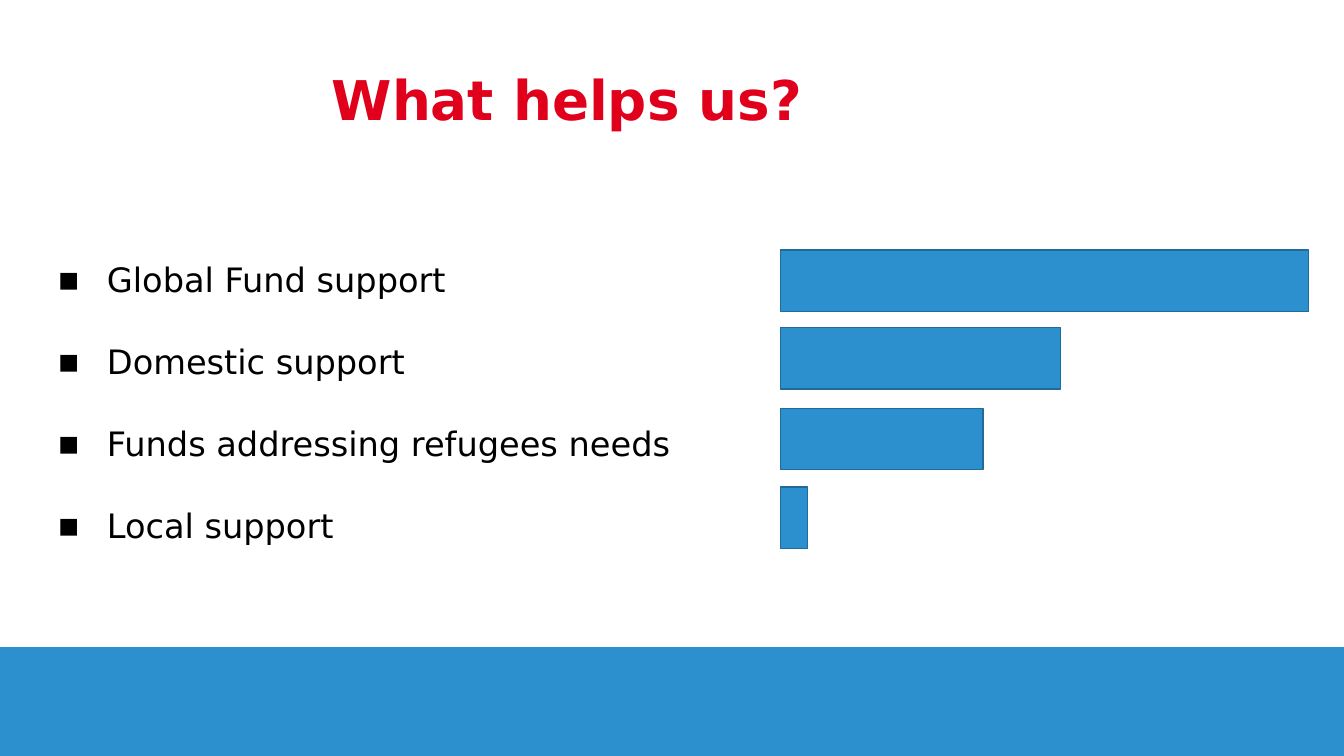
from lxml.etree import SubElement
from pptx import Presentation
from pptx.dml.color import RGBColor
from pptx.enum.shapes import MSO_SHAPE
from pptx.enum.text import MSO_ANCHOR, MSO_AUTO_SIZE, PP_ALIGN
from pptx.oxml.ns import qn
from pptx.util import Inches, Pt

BLUE = RGBColor(0x2C, 0x90, 0xCF)
DARK_BLUE = RGBColor(0x21, 0x6B, 0x99)
RED = RGBColor(0xE0, 0x00, 0x1B)
BLACK = RGBColor(0x00, 0x00, 0x00)
FONT = "DejaVu Sans"

SUPPORT_BARS = [
    ("Global Fund support", 2.48, 5.24),
    ("Domestic support", 3.25, 2.78),
    ("Funds addressing refugees needs", 4.05, 2.01),
    ("Local support", 4.83, 0.27),
]


def add_rectangle(left, top, width, height, line_color):
    shape = page.shapes.add_shape(
        MSO_SHAPE.RECTANGLE, Inches(left), Inches(top), Inches(width), Inches(height)
    )
    shape.shadow.inherit = False
    shape.fill.solid()
    shape.fill.fore_color.rgb = BLUE
    shape.line.color.rgb = line_color
    shape.line.width = Pt(1)


def format_text(para, size, color, bold):
    for span in para.runs:
        span.font.name = FONT
        span.font.size = Pt(size)
        span.font.bold = bold
        span.font.color.rgb = color


deck = Presentation()
deck.slide_width = Inches(13.33)
deck.slide_height = Inches(7.5)
page = deck.slides.add_slide(deck.slide_layouts[1])

add_rectangle(0, 6.43, 13.33, 1.07, BLUE)

title = page.shapes.title
title.left, title.top = Inches(2.88), Inches(0.63)
title.width, title.height = Inches(5.13), Inches(0.71)
frame = title.text_frame
frame.text = "What helps us?"
frame.auto_size = MSO_AUTO_SIZE.NONE
frame.vertical_anchor = MSO_ANCHOR.TOP
frame.margin_left = frame.margin_right = Inches(0.05)
frame.margin_top = frame.margin_bottom = Inches(0.02)
frame.paragraphs[0].alignment = PP_ALIGN.RIGHT
format_text(frame.paragraphs[0], 39.1, RED, True)

body = page.placeholders[1]
body.left, body.top = Inches(0.47), Inches(2.52)
body.width, body.height = Inches(7.27), Inches(3.3)
frame = body.text_frame
frame.text = "\n".join(label for label, top, width in SUPPORT_BARS)
frame.auto_size = MSO_AUTO_SIZE.NONE
frame.vertical_anchor = MSO_ANCHOR.TOP
for index, para in enumerate(frame.paragraphs):
    properties = para._p.get_or_add_pPr()
    properties.set("marL", str(Inches(0.49)))
    properties.set("indent", str(-Inches(0.49)))
    SubElement(properties, qn("a:buFont"), typeface=FONT)
    SubElement(properties, qn("a:buChar"), char="▪")
    para.space_before = Pt(29.7 if index else 0)
    format_text(para, 24, BLACK, False)

for label, top, width in SUPPORT_BARS:
    add_rectangle(7.74, top, width, 0.61, DARK_BLUE)

deck.save("out.pptx")
